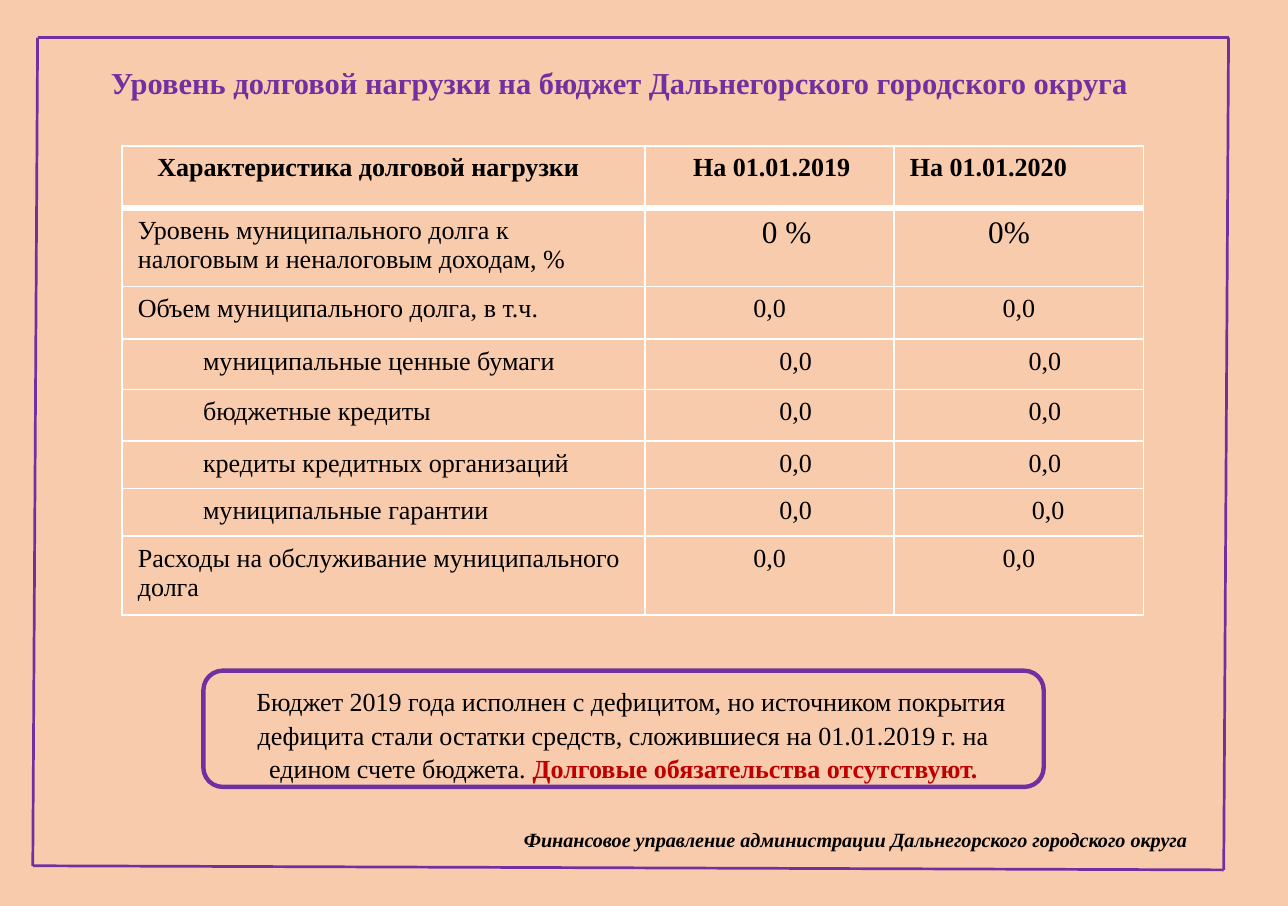
import pptx
import pptx.util
from pptx.dml.color import RGBColor
from pptx.enum.shapes import MSO_CONNECTOR, MSO_SHAPE
from pptx.enum.text import MSO_ANCHOR, PP_ALIGN
from lxml import etree

Pt = pptx.util.Pt


class Theme:
    font = "Times New Roman"
    peach, purple, red = "F8CBAD", "7030A0", "C00000"
    black, white = "000000", "FFFFFF"
    title, value, body, footer = 14, 14.4, 12, 9.3


def style(r, size, color=Theme.black, bold=False, italic=False):
    f = r.font
    f.name, f.size, f.bold, f.italic = Theme.font, Pt(size), bold, italic
    f.color.rgb = RGBColor.from_string(color)


def add_border(cell, side, width):
    """Draw one side of a table cell: L, R, T or B."""
    tcPr = cell._tc.get_or_add_tcPr()
    ns = tcPr.nsmap["a"]
    ln = etree.SubElement(tcPr, f"{{{ns}}}ln{side}", w=str(Pt(width)))
    fill = etree.SubElement(ln, f"{{{ns}}}solidFill")
    etree.SubElement(fill, f"{{{ns}}}srgbClr", val=Theme.white)


prs = pptx.Presentation()
prs.slide_width, prs.slide_height = Pt(592.56), Pt(416.88)
s = prs.slides.add_slide(prs.slide_layouts[5])
s.background.fill.solid()
s.background.fill.fore_color.rgb = RGBColor.from_string(Theme.peach)

# Footer
sp = s.shapes.add_textbox(Pt(217.4), Pt(377.3), Pt(357.8), Pt(18.7))
tf = sp.text_frame
tf.word_wrap = True
tf.margin_left = Pt(23.7)
tf.text = "Финансовое управление администрации Дальнегорского городского округа"
style(tf.paragraphs[0].runs[0], Theme.footer, bold=True, italic=True)

# Frame, slightly slanted
corners = [(17.3, 17.3), (565.2, 17.3), (563, 400.3), (15.1, 398.4)]
for start, end in zip(corners, corners[1:] + corners[:1]):
    line = s.shapes.add_connector(MSO_CONNECTOR.STRAIGHT, *map(Pt, start + end))
    line.line.color.rgb = RGBColor.from_string(Theme.purple)
    line.line.width = Pt(1.25)
    spPr = line._element.spPr
    etree.SubElement(spPr, f"{{{spPr.nsmap['a']}}}effectLst")

# Title
title = s.shapes.title
title.left, title.top, title.width, title.height = Pt(31.7), Pt(25.9), Pt(506.9), Pt(24.5)
tf = title.text_frame
tf.text = "Уровень долговой нагрузки на бюджет Дальнегорского городского округа"
tf.vertical_anchor = MSO_ANCHOR.TOP
tf.paragraphs[0].alignment = PP_ALIGN.CENTER
style(tf.paragraphs[0].runs[0], Theme.title, Theme.purple, bold=True)

# Conclusion
sp = s.shapes.add_textbox(Pt(97.9), Pt(311), Pt(378), Pt(51))
tf = sp.text_frame
tf.word_wrap = True
p = tf.paragraphs[0]
p.alignment = PP_ALIGN.CENTER
p.line_spacing = 1.07
p._p.get_or_add_pPr().set("indent", str(Pt(7.2)))
for text, color, bold in [
    ("Бюджет 2019 года исполнен с дефицитом, но источником покрытия дефицита стали "
     "остатки средств, сложившиеся на 01.01.2019 г. на едином счете бюджета. ",
     Theme.black, False),
    ("Долговые обязательства отсутствуют.", Theme.red, True),
]:
    r = p.add_run()
    r.text = text
    style(r, Theme.body, color, bold)

box = s.shapes.add_shape(MSO_SHAPE.ROUNDED_RECTANGLE, Pt(93.6), Pt(308.6), Pt(386.6), Pt(53.5))
box.shadow.inherit = False
box.fill.background()
box.line.color.rgb = RGBColor.from_string(Theme.purple)
box.line.width = Pt(2)

# Table: row height, texts, left margins
inset, sub_item, sub_value = 7.2, 37.2, 31.2
plain, sub = (inset,) * 3, (sub_item, sub_value, sub_value)
rows = [
    (28.8, ("Характеристика долговой нагрузки", "На 01.01.2019", "На 01.01.2020"),
     (16.2, 22.2, inset)),
    (36, ("Уровень муниципального долга к налоговым и неналоговым доходам, %", "0 %", "0%"),
     (inset, 53.8, 43.2)),
    (24.2, ("Объем муниципального долга, в т.ч.", "0,0", "0,0"), plain),
    (23.2, ("муниципальные ценные бумаги", "0,0", "0,0"), sub),
    (23.8, ("бюджетные кредиты", "0,0", "0,0"), sub),
    (21.8, ("кредиты кредитных организаций", "0,0", "0,0"), sub),
    (22, ("муниципальные гарантии", "0,0", "0,0"), (sub_item, sub_value, 34.2)),
    (36, ("Расходы на обслуживание муниципального долга", "0,0", "0,0"), plain),
]
table = s.shapes.add_table(len(rows), 3, Pt(56.2), Pt(67), Pt(469.9), Pt(215.8)).table
for column, width in zip(table.columns, (240.5, 114.7, 114.7)):
    column.width = Pt(width)
for i, (height, texts, margins) in enumerate(rows):
    table.rows[i].height = Pt(height)
    for j, (text, margin) in enumerate(zip(texts, margins)):
        cell = table.cell(i, j)
        cell.margin_left = Pt(margin)
        cell.text = text
        p = cell.text_frame.paragraphs[0]
        p.alignment = PP_ALIGN.CENTER if i > 1 and j else PP_ALIGN.LEFT
        style(p.runs[0], Theme.value if i == 1 and j else Theme.body, bold=i == 0)
        for side in "LRTB":
            under_header = (i, side) in ((0, "B"), (1, "T"))
            add_border(cell, side, 3 if under_header else 1)
        cell.fill.solid()
        cell.fill.fore_color.rgb = RGBColor.from_string(Theme.peach)

prs.save("out.pptx")
